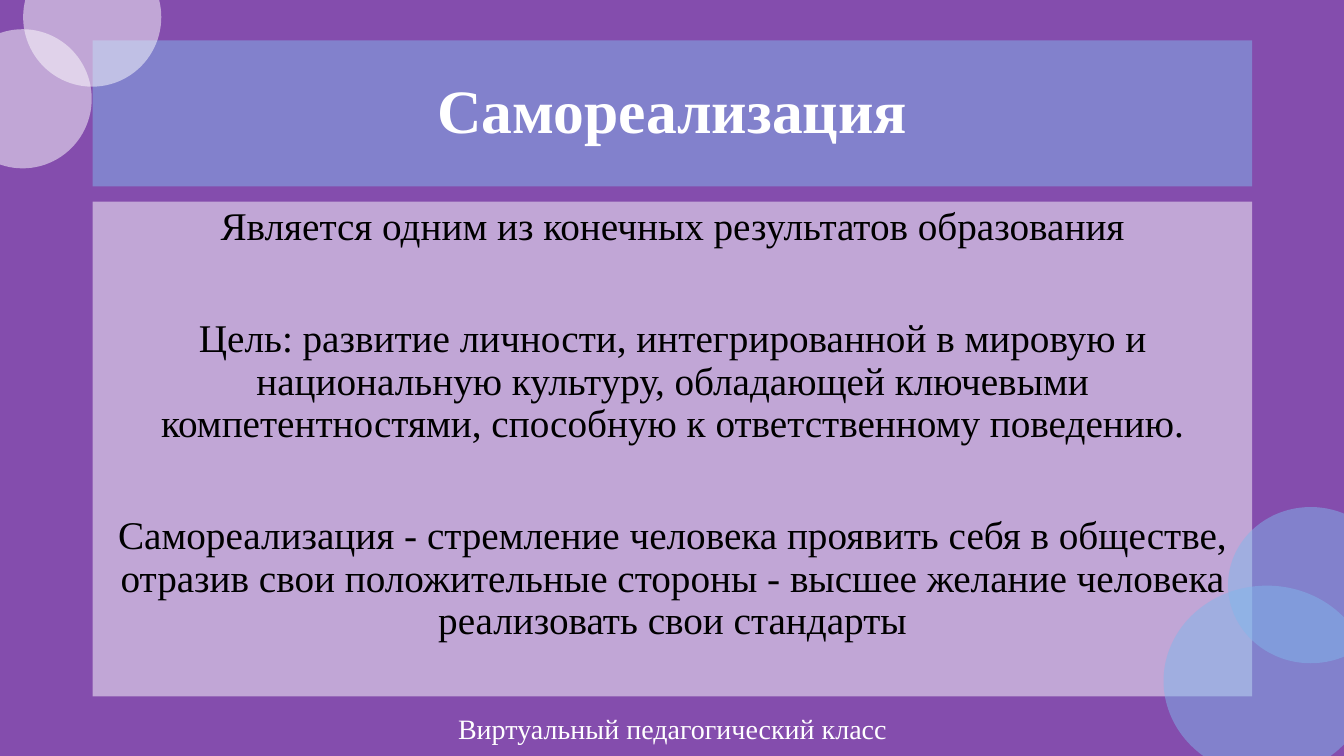
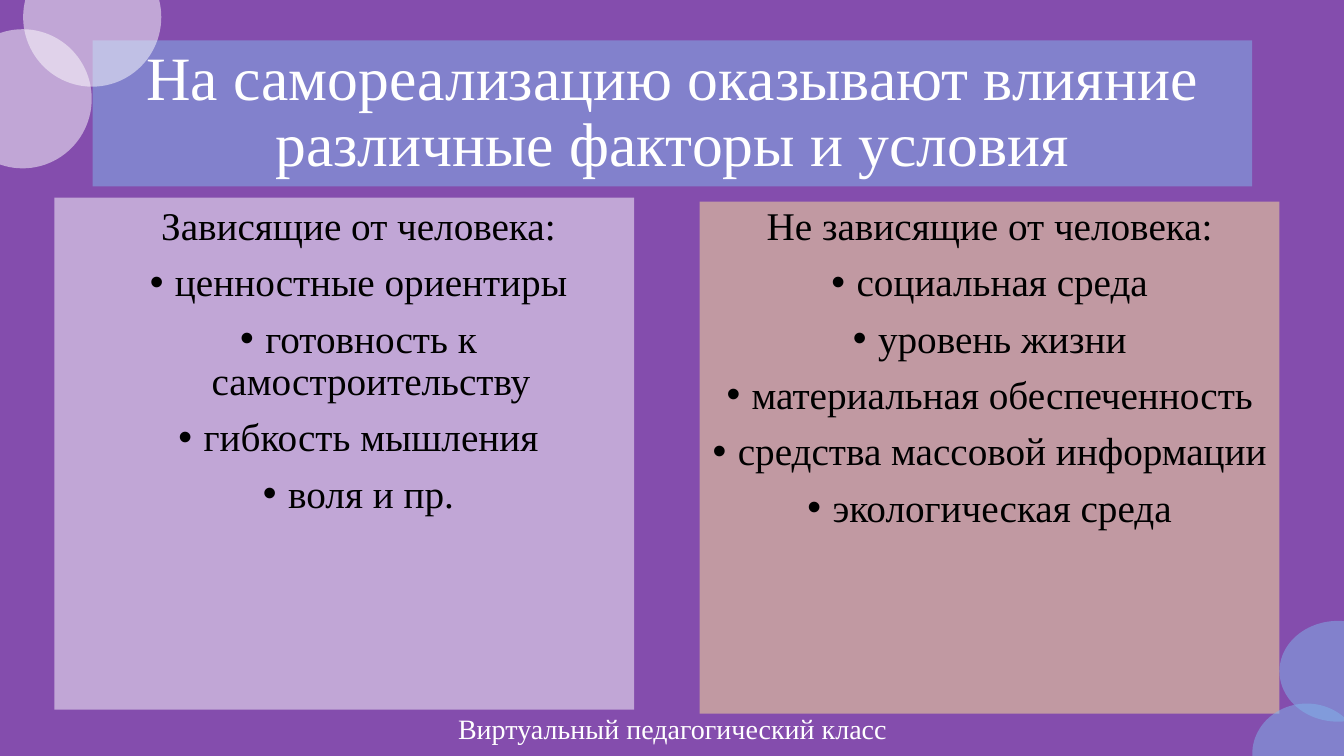
from lxml import etree
from pptx import Presentation
from pptx.dml.color import RGBColor
from pptx.enum.shapes import MSO_SHAPE
from pptx.enum.text import MSO_ANCHOR, PP_ALIGN
from pptx.oxml.ns import qn
from pptx.util import Emu, Pt

RECT = MSO_SHAPE.RECTANGLE
OVAL = MSO_SHAPE.OVAL
TOP = MSO_ANCHOR.TOP
MIDDLE = MSO_ANCHOR.MIDDLE
CENTER = PP_ALIGN.CENTER

EMU_PER_PX = 9144
FONT = "Times New Roman"
PURPLE = "844DAD"
WHITE = "FFFFFF"
BLACK = "000000"
BLUE = "81B6EB"
YELLOW = "FFE699"

TITLE_BOX = (92, 40, 1150, 145)
FOOTER_BOX = (409, 707, 516, 31)
FOOTER = "Виртуальный педагогический класс"
TOP_CIRCLES = [(-46, 29, 137, 138), (23, -52, 137, 138)]
INDENT = 25


def px(n):
    return Emu(n * EMU_PER_PX)


def color(value):
    return RGBColor.from_string(value)


def add_glass(s, kind, box, fill):
    sp = s.shapes.add_shape(kind, *map(px, box))
    sp.shadow.inherit = False
    sp.line.fill.background()
    sp.fill.solid()
    sp.fill.fore_color.rgb = color(fill)
    srgb = sp.fill._xPr.find(".//" + qn("a:srgbClr"))
    etree.SubElement(srgb, qn("a:alpha"), val="50000")
    return sp


def add_text_box(s, box, anchor=TOP):
    tf = s.shapes.add_textbox(*map(px, box)).text_frame
    tf.word_wrap = True
    tf.vertical_anchor = anchor
    return tf


def add_paragraph(tf, text, size, fill, bold=False, before=0, line=0.9):
    p = tf.paragraphs[0] if not tf.text else tf.add_paragraph()
    p.alignment = CENTER
    p.line_spacing = line
    p.space_before = Pt(before)
    r = p.add_run()
    r.text = text
    r.font.name = FONT
    r.font.size = Pt(size)
    r.font.bold = bold
    r.font.color.rgb = color(fill)
    return p


def add_bullet(p):
    pPr = p._p.get_or_add_pPr()
    pPr.set("marL", str(px(INDENT)))
    pPr.set("indent", str(px(-INDENT)))
    etree.SubElement(pPr, qn("a:buFont"), typeface="Arial")
    etree.SubElement(pPr, qn("a:buChar"), char="•")


def add_body(s, box, paragraphs, gap):
    tf = add_text_box(s, box)
    for i, text in enumerate(paragraphs):
        add_paragraph(tf, text, 28, BLACK, before=gap if i else 10)
    return tf


def add_factors(s, box, heading, factors):
    tf = add_body(s, box, [heading, *factors], 10)
    for p in tf.paragraphs[1:]:
        add_bullet(p)


def add_title(s, text, bold=False):
    add_glass(s, RECT, TITLE_BOX, BLUE)
    add_paragraph(add_text_box(s, TITLE_BOX, MIDDLE), text, 44, WHITE, bold)


def add_decor(s, bottom_circles):
    lower, upper = bottom_circles
    add_glass(s, OVAL, lower, BLUE)
    for box in TOP_CIRCLES:
        add_glass(s, OVAL, box, WHITE)
    add_glass(s, OVAL, upper, BLUE)
    add_paragraph(add_text_box(s, FOOTER_BOX, MIDDLE), FOOTER, 20, WHITE, line=1.0)


def add_slide(prs):
    s = prs.slides.add_slide(prs.slide_layouts[6])
    s.background.fill.solid()
    s.background.fill.fore_color.rgb = color(PURPLE)
    return s


def build_definition(prs):
    s = add_slide(prs)
    add_glass(s, RECT, (92, 200, 1150, 491), WHITE)
    add_title(s, "Самореализация", bold=True)
    add_body(s, (92, 200, 1150, 476), [
        "Является одним из конечных результатов образования",
        "Цель: развитие личности, интегрированной в мировую и национальную "
        "культуру, обладающей ключевыми компетентностями, способную "
        "к ответственному поведению.",
        "Самореализация - стремление человека проявить себя в обществе, "
        "отразив свои положительные стороны - высшее желание человека "
        "реализовать свои стандарты",
    ], 50)
    add_decor(s, [(1154, 581, 205, 189), (1218, 503, 164, 155)])


def build_factors(prs):
    s = add_slide(prs)
    add_glass(s, RECT, (694, 200, 575, 508), YELLOW)
    add_glass(s, RECT, (54, 196, 575, 508), WHITE)
    add_title(s, "На самореализацию оказывают влияние различные факторы и условия")
    add_factors(s, (68, 200, 575, 534), "Зависящие от человека:", [
        "ценностные ориентиры",
        "готовность к самостроительству",
        "гибкость мышления",
        "воля и пр.",
    ])
    add_factors(s, (694, 200, 575, 534), "Не зависящие от человека:", [
        "социальная среда",
        "уровень жизни",
        "материальная обеспеченность",
        "средства массовой информации",
        "экологическая среда",
    ])
    add_decor(s, [(1242, 698, 108, 100), (1269, 616, 116, 100)])


def main():
    prs = Presentation()
    prs.slide_width = px(1333)
    prs.slide_height = px(750)
    build_definition(prs)
    build_factors(prs)
    prs.save("out.pptx")


if __name__ == "__main__":
    main()
